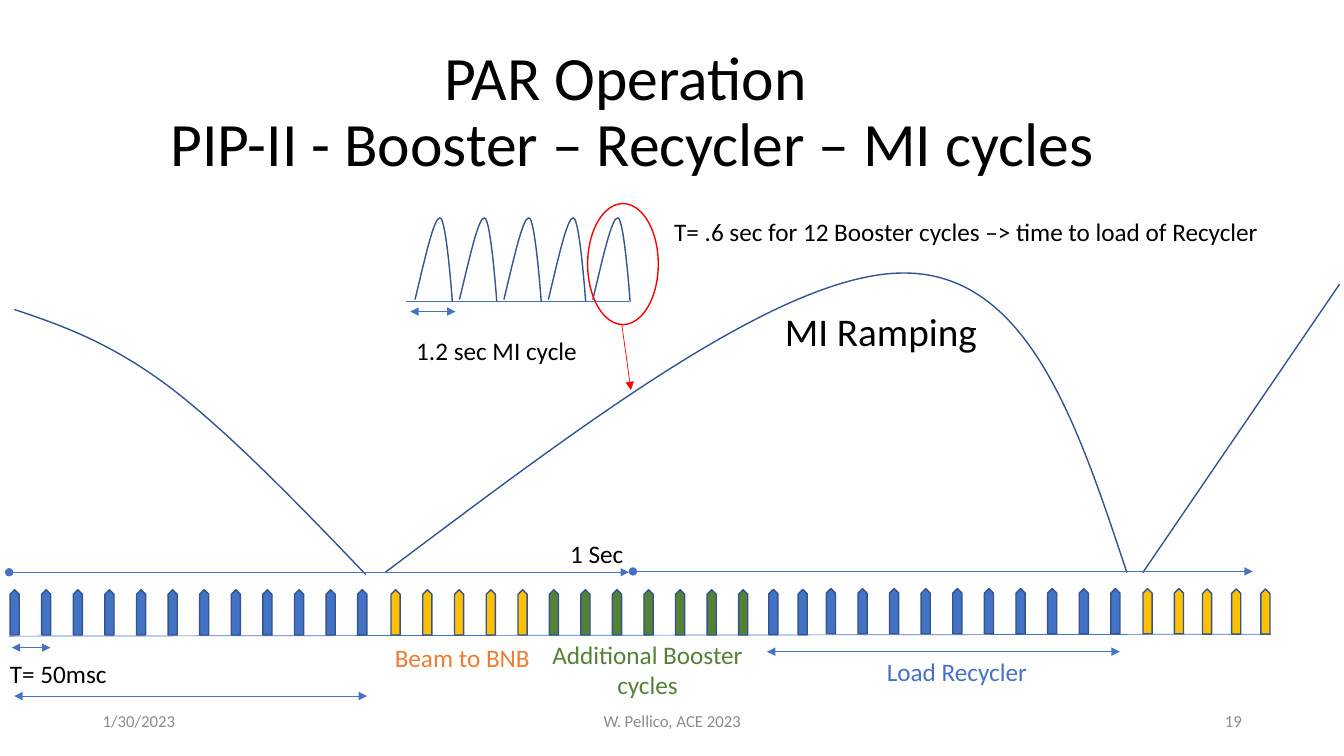
import dataclasses

import lxml.etree
import pptx
import pptx.dml.color
import pptx.enum.shapes
import pptx.enum.text
import pptx.oxml.ns
import pptx.util

Cm = pptx.util.Cm
RGBColor = pptx.dml.color.RGBColor
SHAPE = pptx.enum.shapes.MSO_SHAPE
ALIGN = pptx.enum.text.PP_ALIGN
ANCHOR = pptx.enum.text.MSO_ANCHOR
qn = pptx.oxml.ns.qn

BLUE = RGBColor(0x44, 0x72, 0xC4)
OUTLINE = RGBColor(0x32, 0x54, 0x91)
GOLD = RGBColor(0xFF, 0xC0, 0x00)
GREEN = RGBColor(0x54, 0x82, 0x35)
ORANGE = RGBColor(0xED, 0x7D, 0x31)
RED = RGBColor(0xFF, 0x00, 0x00)
BLACK = RGBColor(0x00, 0x00, 0x00)
GREY = RGBColor(0x8C, 0x8C, 0x8C)

PULSE_LENGTH, PULSE_WIDTH = 1.14, 0.23


@dataclasses.dataclass
class Box:
    """A region of the slide, in centimetres."""
    left: float
    top: float
    width: float
    height: float

    def inner(self, left, top, width, height):
        """Box placed relative to this one."""
        return Box(self.left + left, self.top + top, width, height)

    def lengths(self):
        return [Cm(value) for value in dataclasses.astuple(self)]


def add_text(slide, box, text, size=18, color=BLACK, align=ALIGN.LEFT,
             anchor=ANCHOR.TOP, wrap=False, line_spacing=None):
    frame = slide.shapes.add_textbox(*box.lengths()).text_frame
    frame.text = text
    frame.word_wrap = wrap
    frame.vertical_anchor = anchor
    for paragraph in frame.paragraphs:
        paragraph.alignment = align
        paragraph.line_spacing = line_spacing
        font = paragraph.font
        font.name = "Calibri"
        font.size = pptx.util.Pt(size)
        font.color.rgb = color


def add_line(slide, box, start, end, color=BLUE, head=None, tail=None):
    """Straight line between points relative to box, with optional ends."""
    connector = slide.shapes.add_connector(
        pptx.enum.shapes.MSO_CONNECTOR.STRAIGHT,
        Cm(box.left + start[0]), Cm(box.top + start[1]),
        Cm(box.left + end[0]), Cm(box.top + end[1]))
    connector.line.color.rgb = color
    connector.line.width = pptx.util.Pt(0.5)
    outline = connector.line._get_or_add_ln()
    for tag, kind in (("a:headEnd", head), ("a:tailEnd", tail)):
        if kind:
            lxml.etree.SubElement(outline, qn(tag)).set("type", kind)
    lxml.etree.SubElement(connector._element.spPr, qn("a:effectLst"))


def style_shape(shape, line_color, fill_color=None):
    shape.shadow.inherit = False
    if fill_color is None:
        shape.fill.background()
    else:
        shape.fill.solid()
        shape.fill.fore_color.rgb = fill_color
    shape.line.color.rgb = line_color
    shape.line.width = pptx.util.Pt(1)


def add_curve(slide, box, points):
    """Draw chained cubic curves, or one straight stroke for two points."""
    places = [(Cm(box.left + x), Cm(box.top + y)) for x, y in points]
    builder = slide.shapes.build_freeform(*places[0])
    builder.add_line_segments(places[1:], close=False)
    shape = builder.convert_to_shape()
    style_shape(shape, OUTLINE)
    segments = list(shape._element.spPr.iter(qn("a:lnTo")))
    if len(segments) < 3:
        return
    outline = segments[0].getparent()
    for index in range(0, len(segments), 3):
        curve = lxml.etree.SubElement(outline, qn("a:cubicBezTo"))
        for segment in segments[index:index + 3]:
            curve.append(segment[0])
            outline.remove(segment)


def add_title(slide, box):
    add_text(slide, box, "PAR Operation\v PIP-II - Booster – Recycler – MI cycles",
             size=44, align=ALIGN.CENTER, anchor=ANCHOR.MIDDLE, wrap=True,
             line_spacing=0.9)


def add_cycle_inset(slide, box):
    """Five short MI cycles, the last one circled and pointing to the ramp."""
    cycle = ((0, 2.06), (0.25, 1.02), (0.48, -0.03), (0.63, 0),
             (0.79, 0), (0.94, 2.11), (0.94, 2.11))
    add_line(slide, box, (0, 2.47), (5.61, 2.47))
    for index in range(5):
        add_curve(slide, box.inner(0.22 + 1.12 * index, 0.36, 0.94, 2.11), cycle)
    circle = slide.shapes.add_shape(
        SHAPE.OVAL, *box.inner(4.57, 0, 1.78, 3.05).lengths())
    style_shape(circle, RED)
    add_line(slide, box, (5.43, 3.05), (5.66, 4.7), RED, tail="triangle")
    add_line(slide, box, (0.1, 2.72), (1.24, 2.72), head="triangle", tail="triangle")
    add_text(slide, box.inner(0, 3.2, 4.6, 1.02), "1.2 sec MI cycle")
    add_text(slide, box.inner(6.5, 0.2, 15.27, 1.02),
             "T= .6 sec for 12 Booster cycles –> time to load of Recycler")


def add_ramps(slide, box):
    ramps = (
        ((8.86, 7.6), (7.13, 5.79), (5.38, 3.99), (3.91, 2.87),
         (2.43, 1.76), (1.21, 1.32), (0, 0.92)),
        ((9.34, 7.55), (14.35, 3.79), (19.33, 0), (22.42, 0),
         (25.55, 0), (26.79, 3.79), (28.04, 7.55)),
        ((28.44, 7.55), (33.4, 0.28)),
    )
    for ramp in ramps:
        add_curve(slide, box, ramp)
    add_text(slide, box.inner(19.17, 0.87, 11.73, 2.82), "MI Ramping",
             size=28, wrap=True, line_spacing=0.9)


def add_pulse_train(slide, box):
    """Booster pulses on a base line, coloured by their use."""
    add_line(slide, box, (0, 1.17), (31.8, 1.12))
    # First centre, last centre, centre height, count, colour
    runs = (
        (0.14, 8.9, 0.57, 12, BLUE),
        (9.74, 12.94, 0.57, 5, GOLD),
        (13.73, 18.5, 0.57, 7, GREEN),
        (19.26, 20, 0.56, 2, BLUE),
        (20.71, 27.88, 0.54, 10, BLUE),
        (28.69, 29.48, 0.54, 2, GOLD),
        (30.19, 31.66, 0.55, 3, GOLD),
    )
    for first, last, middle, count, color in runs:
        spacing = (last - first) / (count - 1)
        for index in range(count):
            place = box.inner(first + spacing * index - PULSE_LENGTH / 2,
                              middle - PULSE_WIDTH / 2, PULSE_LENGTH, PULSE_WIDTH)
            pulse = slide.shapes.add_shape(SHAPE.PENTAGON, *place.lengths())
            pulse.rotation = 270
            style_shape(pulse, OUTLINE, color)


def add_time_scale(slide, box):
    for start, end, height in ((0, 15.62, 0.99), (15.72, 31.34, 0.97)):
        add_line(slide, box, (start, height), (end, height),
                 head="oval", tail="triangle")
    add_text(slide, box.inner(13.89, 0, 1.88, 1.02), "1 Sec")


def add_train_labels(slide, box):
    for start, end, height in ((0.3, 1.27, 0.33), (0.36, 9.25, 1.55),
                               (19.33, 28.22, 0.43)):
        add_line(slide, box, (start, height), (end, height),
                 head="triangle", tail="triangle")
    labels = (
        (0, 0.48, 2.97, 1.02, "T= 50msc", BLACK, ALIGN.LEFT),
        (9.7, 0.08, 3.94, 1.02, "Beam to BNB", ORANGE, ALIGN.LEFT),
        (13.64, 0, 5.36, 1.8, "Additional Booster\ncycles", GREEN, ALIGN.CENTER),
        (22.1, 0.43, 4.09, 1.02, "Load Recycler", BLUE, ALIGN.LEFT),
    )
    for left, top, width, height, text, color, align in labels:
        add_text(slide, box.inner(left, top, width, height), text,
                 color=color, align=align)


def add_footer(slide, box):
    parts = ((0, 7.62, "1/30/2023", ALIGN.LEFT),
             (8.89, 11.43, "W. Pellico, ACE 2023", ALIGN.CENTER),
             (21.59, 7.62, "19", ALIGN.RIGHT))
    for left, width, text, align in parts:
        add_text(slide, box.inner(left, 0, width, box.height), text, size=12,
                 color=GREY, align=align, anchor=ANCHOR.MIDDLE, wrap=True)


def main():
    presentation = pptx.Presentation()
    presentation.slide_width = Cm(33.87)
    presentation.slide_height = Cm(19.05)
    slide = presentation.slides.add_slide(presentation.slide_layouts[6])
    add_title(slide, Box(0.01, 1.02, 31.52, 3.68))
    add_cycle_inset(slide, Box(10.24, 5.13, 21.77, 4.7))
    add_pulse_train(slide, Box(0.23, 14.86, 31.8, 1.17))
    add_ramps(slide, Box(0.36, 6.88, 33.4, 7.6))
    add_time_scale(slide, Box(0.23, 13.43, 31.34, 1.02))
    add_train_labels(slide, Box(0, 15.99, 28.22, 1.8))
    add_footer(slide, Box(2.34, 17.65, 29.21, 1.02))
    presentation.save("out.pptx")


if __name__ == "__main__":
    main()
